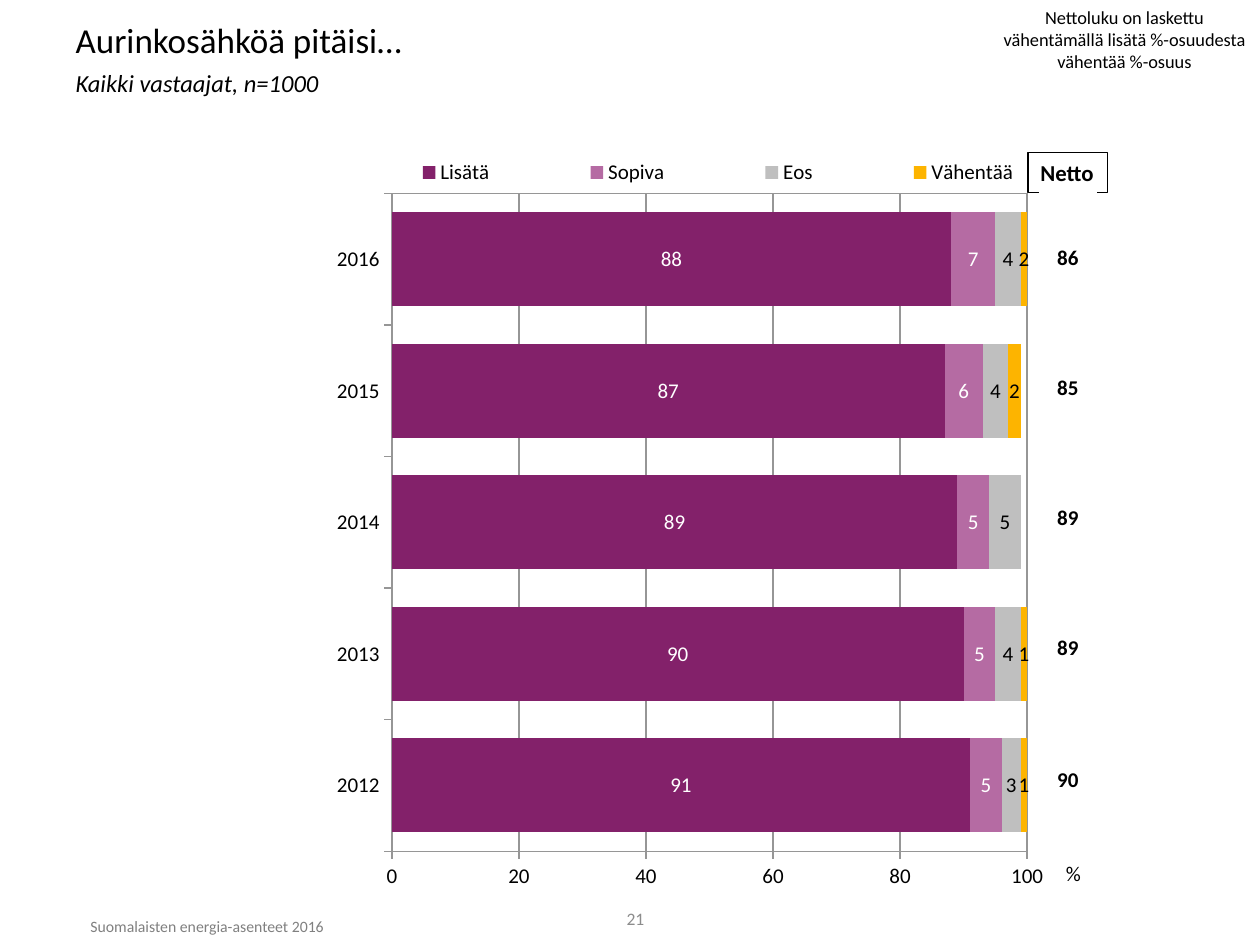
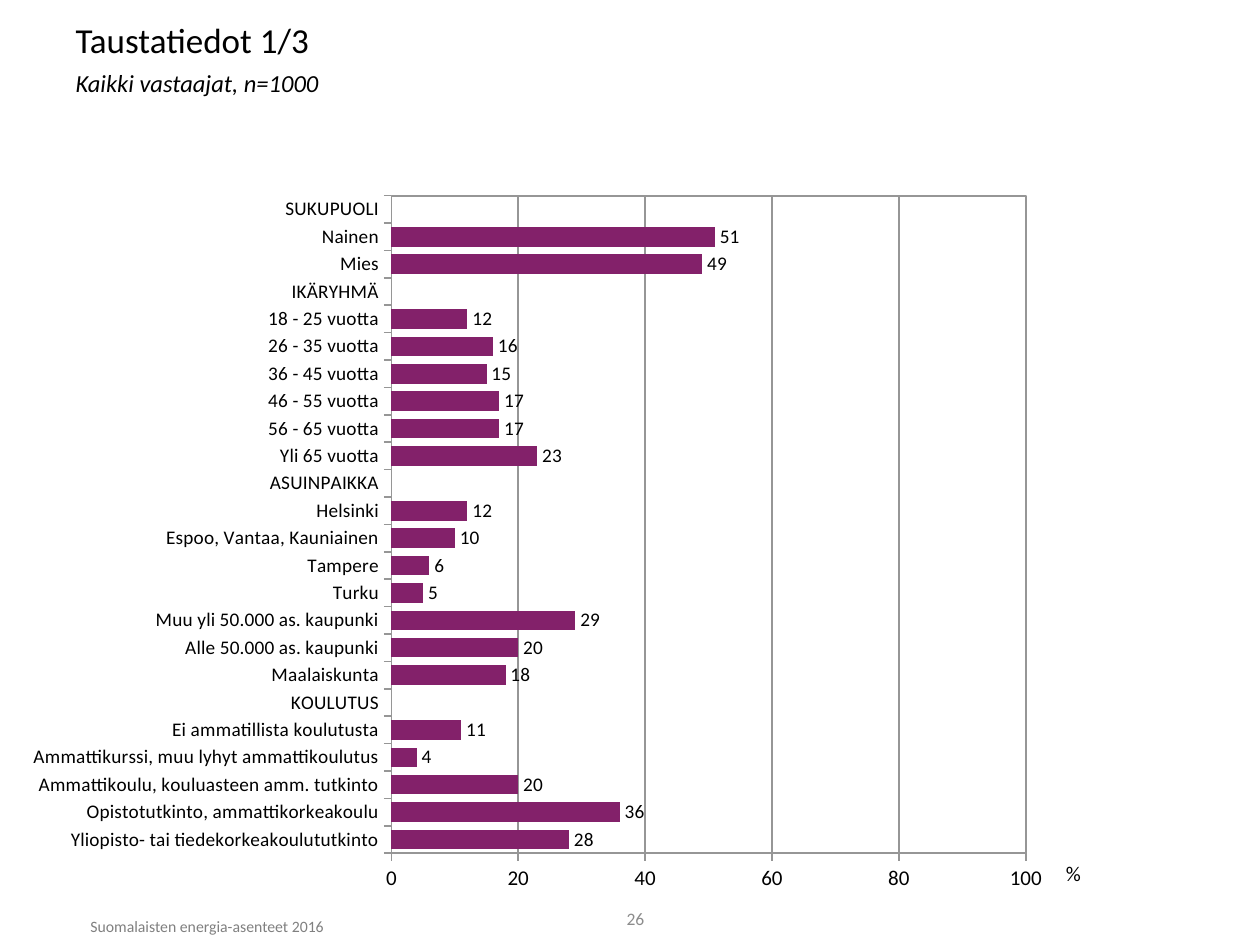
from lxml import etree
from pptx import Presentation
from pptx import util as u
from pptx.chart import data as chart_data
from pptx.dml.color import RGBColor
from pptx.enum import chart as ch
from pptx.enum import shapes, text
from pptx.oxml import parse_xml
from pptx.oxml.ns import nsdecls, qn

Pt = u.Pt

# Shared style
FONT = "Calibri"
BLACK = RGBColor(0x00, 0x00, 0x00)
WHITE = RGBColor(0xFF, 0xFF, 0xFF)
FOOTER_GRAY = RGBColor(0x80, 0x80, 0x80)
NUMBER_GRAY = RGBColor(0x8C, 0x8C, 0x8C)
AXIS_GRAY = RGBColor(0x96, 0x96, 0x96)
PLUM = RGBColor(0x83, 0x21, 0x6A)
ORCHID = RGBColor(0xB5, 0x6B, 0xA3)
SILVER = RGBColor(0xBF, 0xBF, 0xBF)
AMBER = RGBColor(0xFD, 0xB4, 0x00)
AXIS_WIDTH = Pt(0.92)

# Slide content
YEARS = ["2016", "2015", "2014", "2013", "2012"]
INCREASE = [88, 87, 89, 90, 91]
DECREASE = [2, 2, None, 1, 1]
OPINIONS = [  # name, values, bar colour, label colour
    ("Lisätä", INCREASE, PLUM, WHITE),
    ("Sopiva", [7, 6, 5, 5, 5], ORCHID, WHITE),
    ("Eos", [4, 4, 5, 4, 3], SILVER, BLACK),
    ("Vähentää", DECREASE, AMBER, BLACK),
]
BACKGROUND = {
    "SUKUPUOLI": None, "Nainen": 51, "Mies": 49,
    "IKÄRYHMÄ": None, "18 - 25 vuotta": 12, "26 - 35 vuotta": 16,
    "36 - 45 vuotta": 15, "46 - 55 vuotta": 17, "56 - 65 vuotta": 17,
    "Yli 65 vuotta": 23,
    "ASUINPAIKKA": None, "Helsinki": 12, "Espoo, Vantaa, Kauniainen": 10,
    "Tampere": 6, "Turku": 5, "Muu yli 50.000 as. kaupunki": 29,
    "Alle 50.000 as. kaupunki": 20, "Maalaiskunta": 18,
    "KOULUTUS": None, "Ei ammatillista koulutusta": 11,
    "Ammattikurssi, muu lyhyt ammattikoulutus": 4,
    "Ammattikoulu, kouluasteen amm. tutkinto": 20,
    "Opistotutkinto, ammattikorkeakoulu": 36,
    "Yliopisto- tai tiedekorkeakoulututkinto": 28,
}


def set_font(font, size, color=BLACK, bold=False, italic=False):
    font.name, font.size = FONT, Pt(size)
    font.bold, font.italic = bold, italic
    font.color.rgb = color


def write(para, words, align=text.PP_ALIGN.LEFT, **style):
    """Add one formatted span to a paragraph."""
    para.alignment = align
    span = para.add_run()
    span.text = words
    set_font(span.font, **style)


def add_label(page, words, left, top, width, height,
              anchor=text.MSO_ANCHOR.TOP, **style):
    box = page.shapes.add_textbox(Pt(left), Pt(top), Pt(width), Pt(height))
    box.text_frame.word_wrap = True
    box.text_frame.vertical_anchor = anchor
    write(box.text_frame.paragraphs[0], words, **style)


def add_page(deck, heading, number):
    """Add a slide with title, subtitle, footer and number."""
    page = deck.slides.add_slide(deck.slide_layouts[5])
    title = page.shapes.title
    title.left, title.top, title.width, title.height = Pt(36), Pt(10), Pt(648), Pt(90)
    frame = title.text_frame
    frame.auto_size = text.MSO_AUTO_SIZE.NONE
    frame.vertical_anchor = text.MSO_ANCHOR.TOP
    para = frame.paragraphs[0]
    para.line_spacing = Pt(21)
    write(para, heading, size=20)
    para.add_line_break()
    write(para, "Kaikki vastaajat, n=1000", size=14, italic=True)

    add_label(page, "Suomalaisten energia-asenteet 2016", 44.6, 520.5, 172, 18,
              size=9, color=FOOTER_GRAY)
    add_label(page, str(number), 207.4, 510.5, 167.8, 28.8, size=10,
              color=NUMBER_GRAY, align=text.PP_ALIGN.RIGHT,
              anchor=text.MSO_ANCHOR.MIDDLE)
    return page


def manual_layout(x, y, width, height, inner=False):
    target = '<c:layoutTarget val="inner"/>' if inner else ""
    return parse_xml(
        f'<c:layout {nsdecls("c")}><c:manualLayout>{target}'
        '<c:xMode val="edge"/><c:yMode val="edge"/>'
        f'<c:x val="{x}"/><c:y val="{y}"/><c:w val="{width}"/><c:h val="{height}"/>'
        '</c:manualLayout></c:layout>')


def place_plot(chart, area):
    """Fix the inner plot area and give it a thin border."""
    plot_area = chart.plots[0]._element.getparent()
    for old in plot_area.findall(qn("c:layout")):
        plot_area.remove(old)
    plot_area.insert(0, manual_layout(*area, inner=True))
    plot_area.append(parse_xml(
        f'<c:spPr {nsdecls("c", "a")}><a:noFill/><a:ln w="{AXIS_WIDTH}">'
        f'<a:solidFill><a:srgbClr val="{AXIS_GRAY}"/></a:solidFill></a:ln></c:spPr>'))


def draw_line(line):
    line.color.rgb = AXIS_GRAY
    line.width = AXIS_WIDTH


def add_bars(page, kind, categories, series_rows, frame, area, size, label_place):
    """Add a horizontal bar chart on a 0-100 scale, first category on top."""
    data = chart_data.CategoryChartData()
    data.categories = categories
    for name, values, _, _ in series_rows:
        data.add_series(name, values)
    chart = page.shapes.add_chart(kind, *map(Pt, frame), data).chart
    chart.has_title = chart.has_legend = False
    set_font(chart.font, size)
    place_plot(chart, area)

    plot = chart.plots[0]
    plot.gap_width = 40
    plot.vary_by_categories = False
    for series, (_, _, color, label_color) in zip(plot.series, series_rows):
        series.format.fill.solid()
        series.format.fill.fore_color.rgb = color
        labels = series.data_labels
        labels.show_value = True
        labels.number_format, labels.number_format_is_linked = "#,##0", False
        labels.position = label_place
        set_font(labels.font, size, label_color)

    for axis, axis_size in ((chart.category_axis, size), (chart.value_axis, 12)):
        axis.major_tick_mark = ch.XL_TICK_MARK.OUTSIDE
        axis.minor_tick_mark = ch.XL_TICK_MARK.NONE
        set_font(axis.tick_labels.font, axis_size)
        draw_line(axis.format.line)
    chart.category_axis.reverse_order = True
    chart.category_axis.tick_label_position = ch.XL_TICK_LABEL_POSITION.LOW
    scale = chart.value_axis
    scale.minimum_scale, scale.maximum_scale, scale.major_unit = 0, 100, 20
    scale.has_major_gridlines = True
    draw_line(scale.major_gridlines.format.line)
    scale.tick_labels.number_format = "0"
    scale.tick_labels.number_format_is_linked = False
    # The scale meets the reversed category axis at its last category, at the bottom
    scale._element.find(qn("c:crosses")).set("val", "max")

    add_label(page, "%", 602, 488.2, 34.6, 21.6, size=12)
    return chart


def add_legend(chart, area):
    chart.has_legend = True
    legend = chart.legend
    legend.position = ch.XL_LEGEND_POSITION.BOTTOM
    legend.include_in_layout = False
    set_font(legend.font, 12)
    for old in legend._element.findall(qn("c:layout")):
        legend._element.remove(old)
    legend._element.insert(1, manual_layout(*area))


def add_net_heading(page):
    box = page.shapes.add_shape(shapes.MSO_SHAPE.RECTANGLE,
                                Pt(587.5), Pt(87.1), Pt(45.4), Pt(23))
    box.shadow.inherit = False
    box.fill.background()
    box.line.color.rgb, box.line.width = BLACK, Pt(0.75)
    box.text_frame.vertical_anchor = text.MSO_ANCHOR.TOP
    box.text_frame.word_wrap = False
    write(box.text_frame.paragraphs[0], "Netto", size=13, bold=True)


def set_borders(cell, color, width):
    properties = cell._tc.get_or_add_tcPr()
    for side in ("a:lnL", "a:lnR", "a:lnT", "a:lnB"):
        line = etree.SubElement(properties, qn(side), w=str(width))
        fill = etree.SubElement(line, qn("a:solidFill"))
        etree.SubElement(fill, qn("a:srgbClr"), val=str(color))


def add_net_table(page, values):
    row_height, last_height = 74.2, 77.8
    heights = [row_height] * (len(values) - 1) + [last_height]
    table = page.shapes.add_table(len(values), 1, Pt(594), Pt(110.2),
                                  Pt(32.4), Pt(sum(heights))).table
    table.first_row = table.horz_banding = False
    for row, height, value in zip(table.rows, heights, values):
        row.height = Pt(height)
        cell = row.cells[0]
        cell.margin_left = cell.margin_right = cell.margin_top = Pt(0.7)
        cell.margin_bottom = 0
        cell.vertical_anchor = text.MSO_ANCHOR.MIDDLE
        set_borders(cell, WHITE, Pt(1))
        cell.fill.background()
        write(cell.text_frame.paragraphs[0], str(value), size=12, bold=True,
              align=text.PP_ALIGN.CENTER)


def build_solar(deck):
    page = add_page(deck, "Aurinkosähköä pitäisi…", 21)
    chart = add_bars(page, ch.XL_CHART_TYPE.BAR_STACKED, YEARS, OPINIONS,
                     frame=(0, 87.8, 695.5, 430.6),
                     area=(0.322, 0.053, 0.522, 0.873),
                     size=12, label_place=ch.XL_LABEL_POSITION.CENTER)
    chart.plots[0].overlap = 100
    add_legend(chart, (0.27, 0, 0.64, 0.05))
    add_label(page, "Nettoluku on laskettu vähentämällä lisätä %-osuudesta "
              "vähentää %-osuus", 565.2, 0, 154.8, 45.4, size=10.5,
              align=text.PP_ALIGN.CENTER)
    add_net_heading(page)
    add_net_table(page, [more - (less or 0) for more, less in zip(INCREASE, DECREASE)])


def build_background(deck):
    page = add_page(deck, "Taustatiedot 1/3", 26)
    add_bars(page, ch.XL_CHART_TYPE.BAR_CLUSTERED, list(BACKGROUND),
             [("Series 1", list(BACKGROUND.values()), PLUM, BLACK)],
             frame=(0, 88.6, 684, 438.5), area=(0.327, 0.053, 0.53, 0.857),
             size=11, label_place=ch.XL_LABEL_POSITION.OUTSIDE_END)


def main():
    deck = Presentation()
    deck.slide_width, deck.slide_height = Pt(720), Pt(540)
    build_solar(deck)
    build_background(deck)
    deck.save("out.pptx")


if __name__ == "__main__":
    main()
